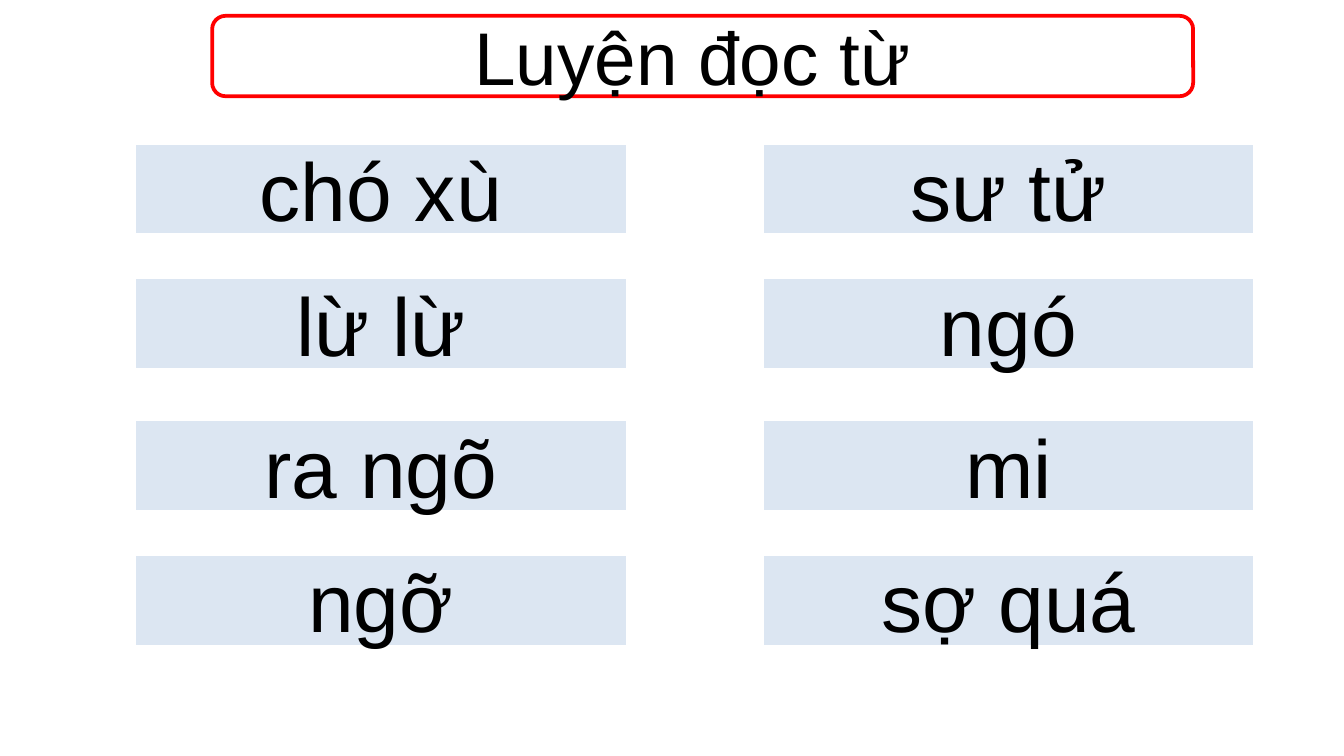
from dataclasses import dataclass

from pptx import Presentation
from pptx import util as u
from pptx.dml.color import RGBColor
from pptx.enum import shapes, text


@dataclass(frozen=True)
class Theme:
    font: str = "Arial"
    ink: str = "000000"
    title_line: str = "FF0000"
    card_fill: str = "DCE6F2"
    card_line: str = "FFFFFF"
    title_size: int = 40
    word_size: int = 44
    line_width: int = 2


def write_text(shape, content, *, font, size, color):
    """Put one centred line of text in the middle of a shape."""
    frame = shape.text_frame
    frame.word_wrap = True
    frame.vertical_anchor = text.MSO_ANCHOR.MIDDLE
    paragraph = frame.paragraphs[0]
    paragraph.alignment = text.PP_ALIGN.CENTER
    run = paragraph.add_run()
    run.text = content
    run.font.name = font
    run.font.size = u.Pt(size)
    run.font.color.rgb = RGBColor.from_string(color)


class SlideBuilder:
    def __init__(self, slide, theme):
        self.slide = slide
        self.theme = theme

    def box(self, kind, place, content, *, size, line, fill=None):
        shape = self.slide.shapes.add_shape(kind, *map(u.Cm, place))
        shape.shadow.inherit = False
        if fill:
            shape.fill.solid()
            shape.fill.fore_color.rgb = RGBColor.from_string(fill)
        else:
            shape.fill.background()
        shape.line.color.rgb = RGBColor.from_string(line)
        shape.line.width = u.Pt(self.theme.line_width)
        write_text(shape, content, font=self.theme.font, size=size,
                   color=self.theme.ink)

    def title(self, place, content):
        self.box(shapes.MSO_SHAPE.ROUNDED_RECTANGLE, place, content,
                 size=self.theme.title_size, line=self.theme.title_line)

    def word_card(self, place, content):
        self.box(shapes.MSO_SHAPE.RECTANGLE, place, content,
                 size=self.theme.word_size, line=self.theme.card_line,
                 fill=self.theme.card_fill)


def main():
    presentation = Presentation()
    presentation.slide_width = u.Cm(25.4)
    presentation.slide_height = u.Cm(14.29)
    slide = presentation.slides.add_slide(presentation.slide_layouts[6])
    builder = SlideBuilder(slide, Theme())

    # Title
    builder.title((4.01, 0.3, 18.54, 1.52), "Luyện đọc từ ")

    # Two columns of words to read aloud
    columns = {
        2.54: ("chó xù", "lừ lừ", "ra ngõ", "ngỡ"),
        14.4: ("sư tử", "ngó", "mi", "sợ quá"),
    }
    row_tops = (2.7, 5.24, 7.93, 10.47)
    card_width, card_height = 9.32, 1.75
    for left, words in columns.items():
        for top, word in zip(row_tops, words):
            builder.word_card((left, top, card_width, card_height), word)

    presentation.save("out.pptx")


if __name__ == "__main__":
    main()
